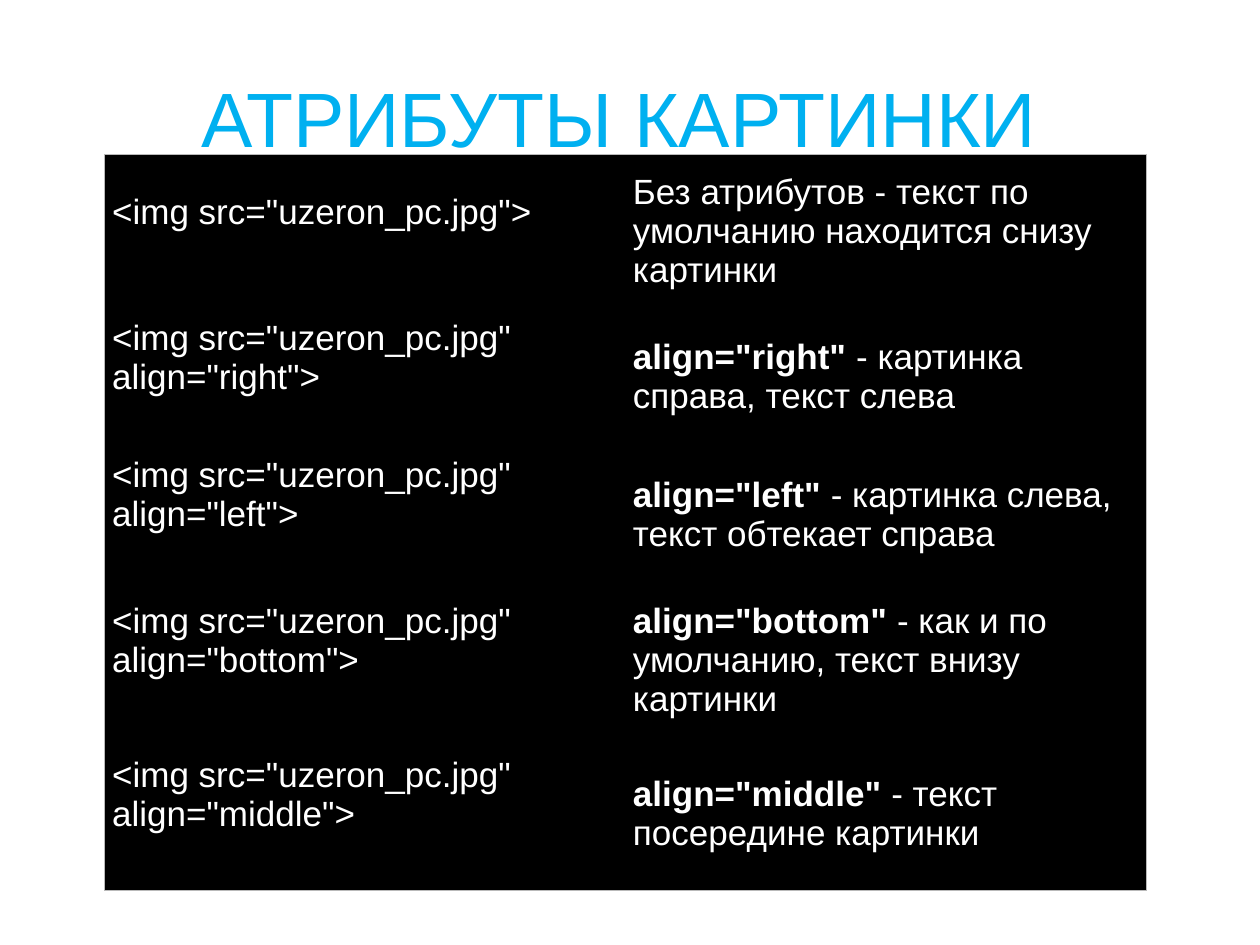
from lxml.etree import SubElement
from pptx import Presentation
from pptx.dml.color import RGBColor
from pptx.enum.text import MSO_ANCHOR as Anchor, PP_ALIGN as Align
from pptx.oxml.ns import qn
from pptx.util import Cm, Pt

FONT = "Arial"
ROW_HEIGHTS = [3.1, 2.77, 2.77, 3.1, 3.1]
ROWS = [
    ('<img src="uzeron_pc.jpg">', "", "Без атрибутов - текст по умолчанию находится снизу картинки"),
    ('<img src="uzeron_pc.jpg" align="right">', 'align="right"', " - картинка справа, текст слева"),
    ('<img src="uzeron_pc.jpg" align="left">', 'align="left"', " - картинка слева, текст обтекает справа"),
    ('<img src="uzeron_pc.jpg" align="bottom">', 'align="bottom"', " - как и по умолчанию, текст внизу картинки"),
    ('<img src="uzeron_pc.jpg" align="middle">', 'align="middle"', " - текст посередине картинки"),
]


def color(value):
    return RGBColor.from_string(value)


def style_font(font, size, value):
    font.name = FONT
    font.size = Pt(size)
    font.color.rgb = color(value)


def set_borders(cell, visible):
    properties = cell._tc.get_or_add_tcPr()
    for side in "LRTB":
        line = SubElement(properties, qn(f"a:ln{side}"), w=str(Pt(0.75)))
        if side in visible:
            fill = SubElement(line, qn("a:solidFill"))
            SubElement(fill, qn("a:srgbClr"), val="B9B9B9")
        else:
            SubElement(line, qn("a:noFill"))


def fill_cell(cell, spans, borders, bottom):
    set_borders(cell, borders)
    cell.fill.solid()
    cell.fill.fore_color.rgb = color("000000")
    cell.vertical_anchor = Anchor.MIDDLE
    cell.margin_left = cell.margin_right = Cm(0.15)
    cell.margin_top, cell.margin_bottom = Cm(0.08), Cm(bottom)
    para = cell.text_frame.paragraphs[0]
    for text, bold in spans:
        if text:
            span = para.add_run()
            span.text = text
            span.font.bold = bold
    style_font(para.font, 20, "FFFFFF")
    for span in para.runs:
        style_font(span.font, 20, "FFFFFF")


def add_title(page, left, top, width, height):
    title = page.shapes.title
    title.left, title.top, title.width, title.height = map(Cm, (left, top, width, height))
    title.text_frame.text = "АТРИБУТЫ КАРТИНКИ "
    title.text_frame.vertical_anchor = Anchor.MIDDLE
    para = title.text_frame.paragraphs[0]
    para.alignment = Align.CENTER
    style_font(para.font, 44, "00B0F0")


def add_attribute_table(page, left, top, width):
    frame = page.shapes.add_table(
        len(ROWS), 2, Cm(left), Cm(top), Cm(width), Cm(sum(ROW_HEIGHTS)))
    table = frame.table
    table.first_row = table.horz_banding = False
    for column in table.columns:
        column.width = Cm(width / 2)
    last = len(ROWS) - 1
    for index, (code, attribute, meaning) in enumerate(ROWS):
        table.rows[index].height = Cm(ROW_HEIGHTS[index])
        edges = ("T" if index == 0 else "") + ("B" if index == last else "")
        fill_cell(table.cell(index, 0), [(code, False)], "L" + edges, 0.87)
        fill_cell(table.cell(index, 1), [(attribute, True), (meaning, False)], "R" + edges, 0.08)


def main():
    deck = Presentation()
    deck.slide_width, deck.slide_height = Cm(25.4), Cm(19.05)
    page = deck.slides.add_slide(deck.slide_layouts[5])
    add_title(page, 1.27, 0.76, 22.86, 3.18)
    add_attribute_table(page, 2.11, 3.12, 21)
    deck.save("out.pptx")


if __name__ == "__main__":
    main()
